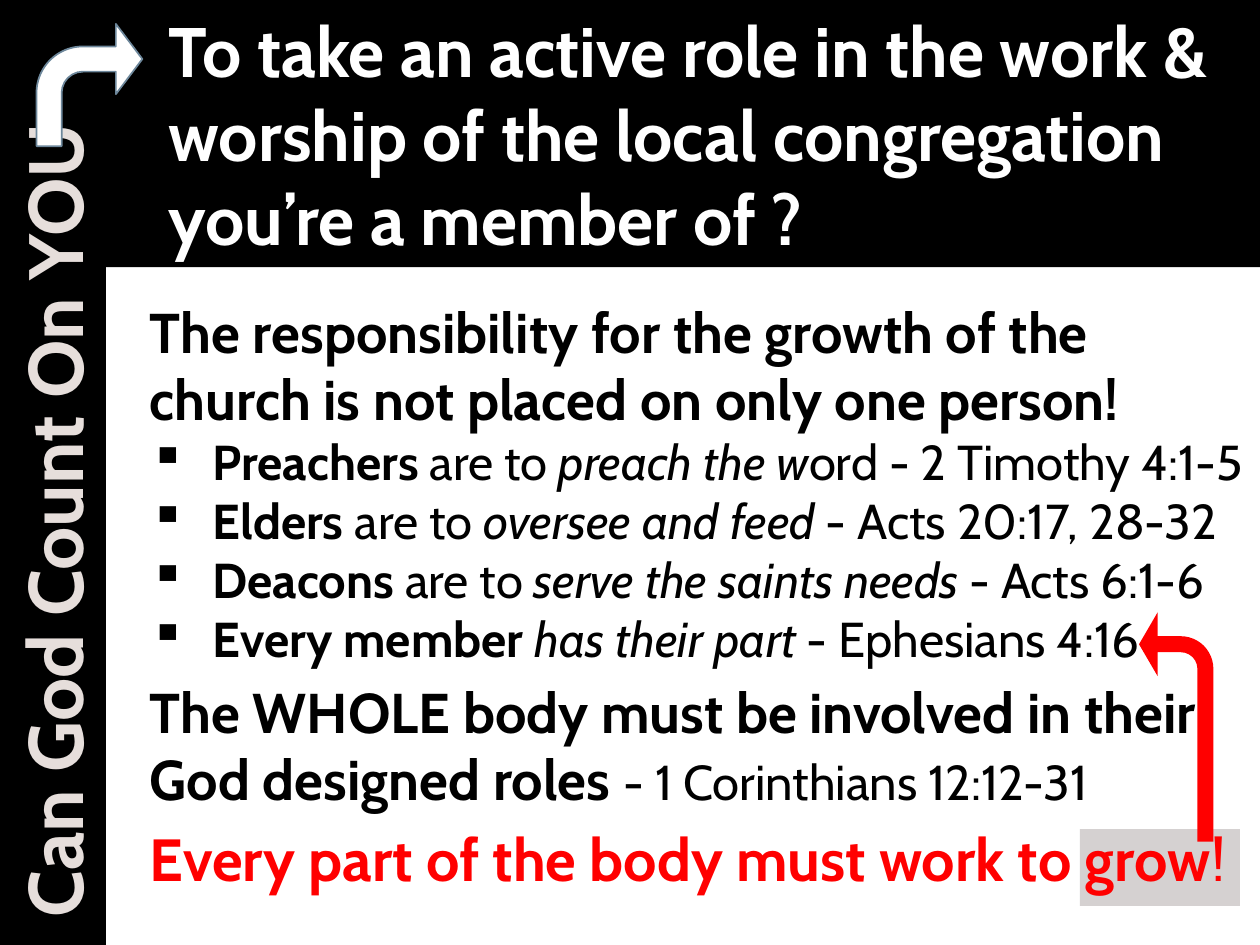
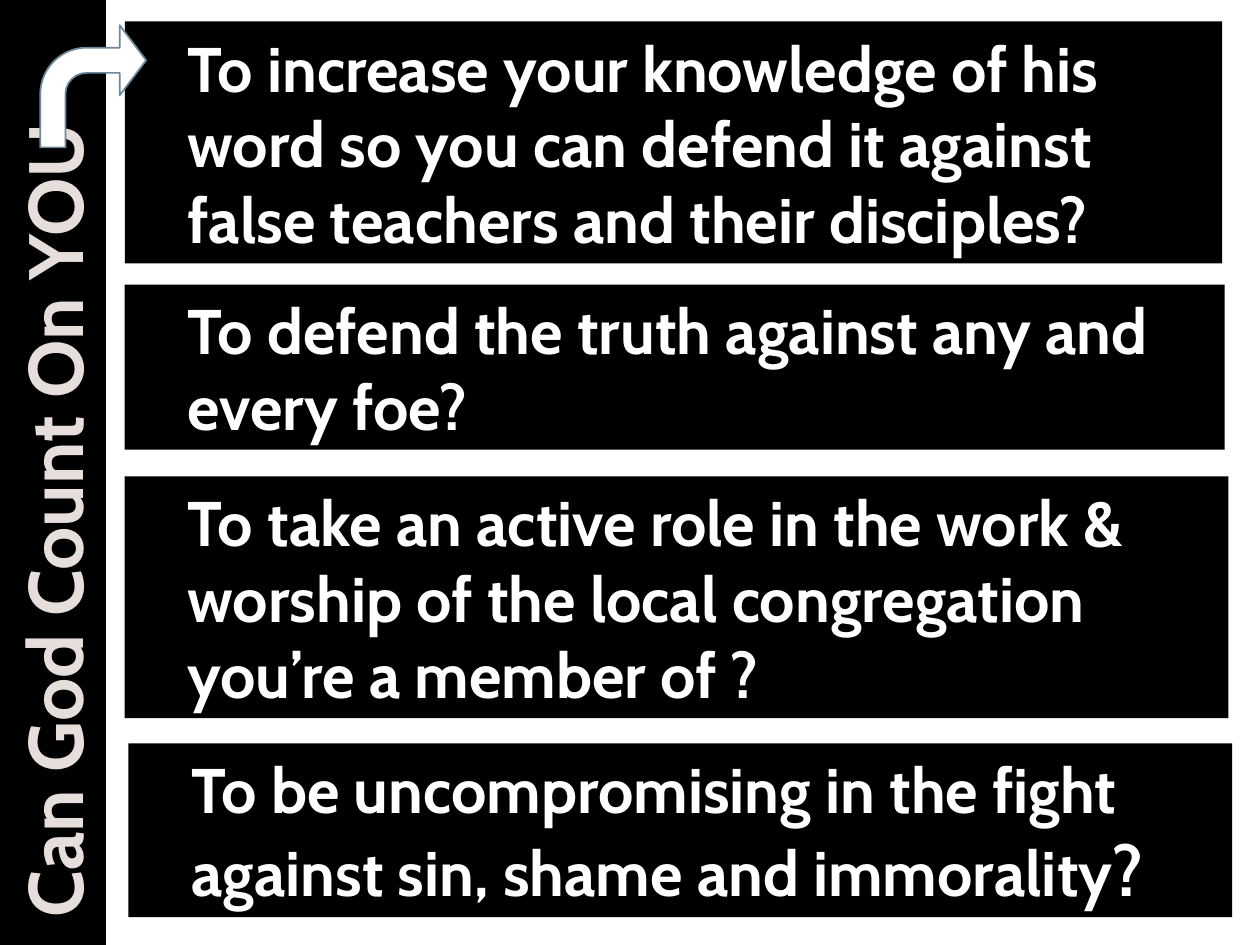
from dataclasses import dataclass

from lxml import etree
from pptx import Presentation
from pptx.dml.color import RGBColor
from pptx.enum.shapes import MSO_SHAPE
from pptx.enum.text import MSO_ANCHOR, MSO_AUTO_SIZE, PP_ALIGN
from pptx.oxml.ns import qn
from pptx.util import Inches, Pt

RECT, BENT = MSO_SHAPE.RECTANGLE, MSO_SHAPE.BENT_ARROW
TOP, MIDDLE = MSO_ANCHOR.TOP, MSO_ANCHOR.MIDDLE
LEFT = PP_ALIGN.LEFT
GROW = MSO_AUTO_SIZE.SHAPE_TO_FIT_TEXT
WIDTH, HEIGHT = Inches(10), Inches(7.5)
COLS, ROWS = 100, 75


@dataclass(frozen=True)
class Theme:
    """Colours, type sizes and font of the deck."""
    font: str = "Cabin"
    black: str = "000000"
    white: str = "FFFFFF"
    sand: str = "E6DEDB"
    slate: str = "6D879B"
    red: str = "FF0000"
    grey: str = "D5D1D1"
    side: int = 44
    head: int = 40
    card: int = 36
    call: int = 34
    lead: int = 32
    item: int = 28


THEME = Theme()
MOTTO = "Can God Count On YOU"
ROLE = ("To take an active role in the work & worship of the local "
        "congregation you’re a member of ?")
DUTIES = [
    [("Preachers", "b"), (" are to ", ""), ("preach the w", "i"),
     ("ord - 2 Timothy 4:1-5", "")],
    [("Elders", "b"), (" are to ", ""), ("oversee and feed ", "i"),
     ("- Acts 20:17, 28-32", "")],
    [("Deacons", "b"), (" are to ", ""), ("serve the saints needs", "i"),
     (" - Acts 6:1-6", "")],
    [("Every member ", "b"), ("has their part ", "i"),
     ("- Ephesians 4:16", "")],
]
CARDS = [
    (9.9, 1.7, 87.1, 19.2,
     [("To increase your knowledge of his word so you can defend it "
       "against false teachers and their disciples?", "b", THEME.card)]),
    (9.9, 22.6, 87.3, 13.1,
     [("To defend the truth against any and every foe?", "b", THEME.card)]),
    (9.9, 37.8, 87.6, 19.2, [(ROLE, "b", THEME.card)]),
    (10.2, 59, 87.6, 13.8,
     [("To be uncompromising in the fight against sin, shame and immorality",
       "b", THEME.card), ("?", "b", THEME.head)]),
]


def cells(col, row, wide, high):
    """Turn grid columns and rows into slide lengths."""
    return (int(WIDTH * col / COLS), int(HEIGHT * row / ROWS),
            int(WIDTH * wide / COLS), int(HEIGHT * high / ROWS))


def add_block(slide, kind, area, fill, line=None):
    """Add a flat filled shape."""
    block = slide.shapes.add_shape(kind, *cells(*area))
    block.shadow.inherit = False
    block.fill.solid()
    block.fill.fore_color.rgb = RGBColor.from_string(fill)
    if line:
        block.line.color.rgb = RGBColor.from_string(line)
        block.line.width = Pt(1)
    else:
        block.line.fill.background()
    return block


def set_frame(shape, anchor):
    """Make a text frame wrap and fit, and return it."""
    frame = shape.text_frame
    frame.word_wrap = True
    frame.auto_size = GROW
    frame.vertical_anchor = anchor
    return frame


def set_runs(para, runs, color):
    """Write left-aligned runs of text, style and size."""
    para.alignment = LEFT
    for text, style, size in runs:
        run = para.add_run()
        run.text = text
        font = run.font
        font.name, font.size = THEME.font, Pt(size)
        font.bold, font.italic = "b" in style, "i" in style
        font.color.rgb = RGBColor.from_string(color)


def set_indent(para, left, first=0, mark=None):
    """Indent a paragraph, in inches, with a bullet if given."""
    props = para._p.get_or_add_pPr()
    props.set("marL", str(Inches(left)))
    props.set("indent", str(Inches(first)))
    if mark:
        etree.SubElement(props, qn("a:buChar")).set("char", mark)


def add_panel(slide, area, runs):
    """Add a black panel with white indented text."""
    panel = add_block(slide, RECT, area, THEME.black)
    para = set_frame(panel, MIDDLE).paragraphs[0]
    set_runs(para, runs, THEME.white)
    set_indent(para, 0.4)


def add_side(slide):
    """Add the upright motto band at the left edge."""
    wide, high = ROWS, 8.4
    area = ((high - wide) / 2, (ROWS - high) / 2, wide, high)
    band = add_block(slide, RECT, area, THEME.black)
    band.rotation = 270
    frame = set_frame(band, MIDDLE)
    frame.margin_left = Inches(0.22)
    set_runs(frame.paragraphs[0], [(MOTTO, "b", THEME.side)], THEME.sand)


def add_bend(slide, area, fill, shares, line=None, flip=False):
    """Add a bent arrow, mirrored on request."""
    bend = add_block(slide, BENT, area, fill, line)
    for spot, share in enumerate(shares):
        bend.adjustments[spot] = share
    if flip:
        bend.element.spPr.xfrm.set("flipH", "1")


def add_cue(slide, col, row):
    """Add the white arrow that leads from the motto."""
    add_bend(slide, (col, row, 8.4, 9.7), THEME.white,
             (0.238, 0.332, 0.25, 0.438), line=THEME.slate)


def add_body(slide, area):
    """Add the lead, the bulleted duties and the closing lines."""
    frame = set_frame(slide.shapes.add_textbox(*cells(*area)), TOP)
    lead = ("The responsibility for the growth of the church is not placed "
            "on only one person!")
    set_runs(frame.paragraphs[0], [(lead, "b", THEME.lead)], THEME.black)
    for duty in DUTIES:
        para = frame.add_paragraph()
        set_runs(para, [(*part, THEME.item) for part in duty], THEME.black)
        set_indent(para, 0.5, -0.5, "▪")
    whole = [("The WHOLE body must be involved in their God designed roles ",
              "b", THEME.lead),
             ("- 1 Corinthians 12:12-31", "", THEME.item)]
    call = [("Every part of the body must work to grow", "b", THEME.call),
            ("!", "", THEME.call)]
    for runs, color in ((whole, THEME.black), (call, THEME.red)):
        para = frame.add_paragraph()
        para.space_before = Pt(6)
        set_runs(para, runs, color)


def add_role(slide):
    """Build the slide on each member's role."""
    add_block(slide, RECT, (85.7, 65.8, 12.7, 6.1), THEME.grey)
    add_panel(slide, (8.4, 0, 91.6, 21.2), [(ROLE, "b", THEME.head)])
    add_side(slide)
    add_cue(slide, 2.9, 1.9)
    add_body(slide, (10.9, 23.1, 89.6, 48.8))
    add_bend(slide, (90.4, 48.6, 5.9, 18.2), THEME.red,
             (0.215, 0.429, 0.25, 0.438), flip=True)


def add_recap(slide):
    """Build the slide of four questions."""
    add_side(slide)
    for *area, runs in CARDS:
        add_panel(slide, area, runs)
    add_cue(slide, 3.2, 2)


def main():
    """Build and save the deck."""
    deck = Presentation()
    deck.slide_width, deck.slide_height = WIDTH, HEIGHT
    blank = deck.slide_layouts[6]
    for build in (add_role, add_recap):
        build(deck.slides.add_slide(blank))
    deck.save("out.pptx")


if __name__ == "__main__":
    main()
